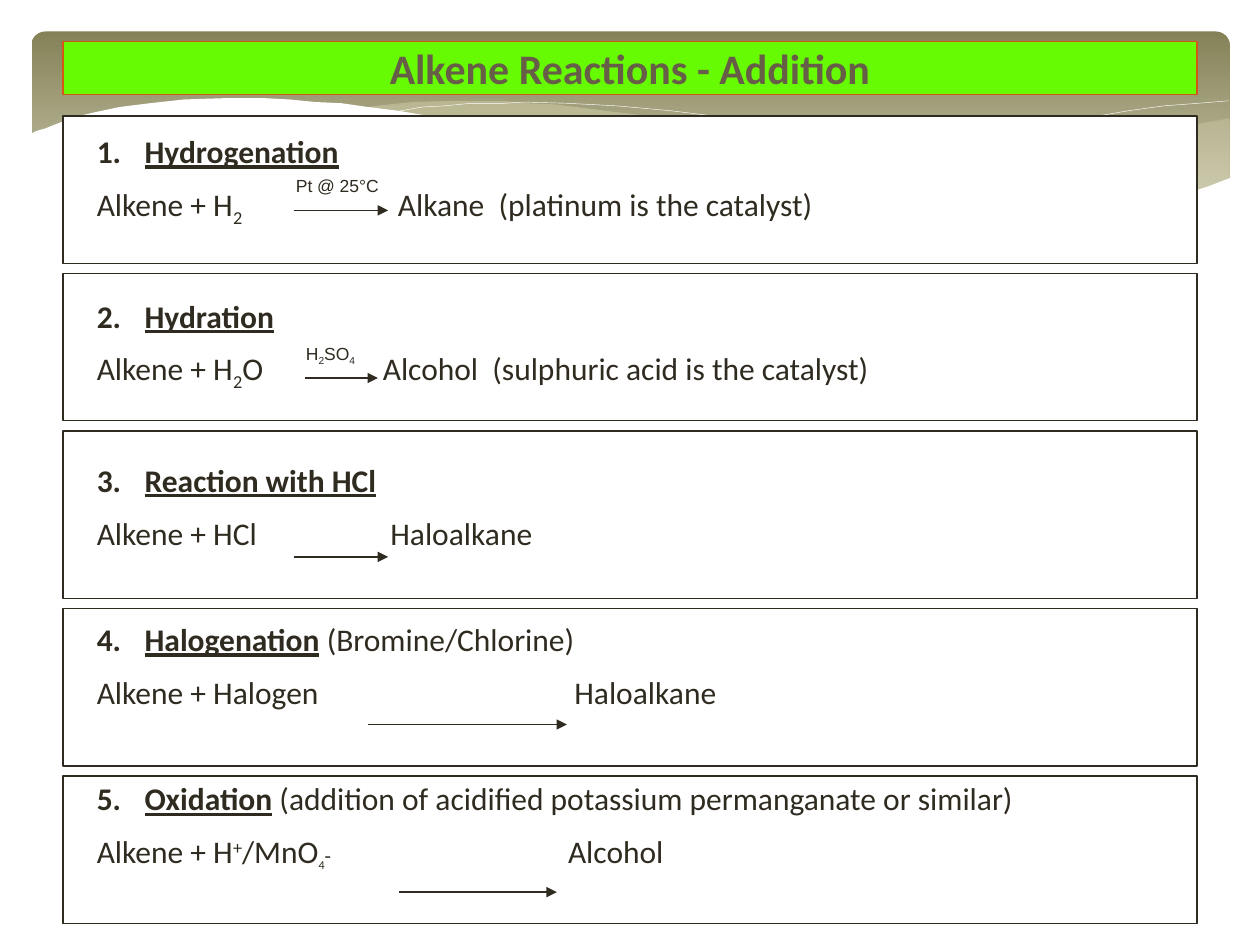
from itertools import accumulate
from lxml import etree
from pptx import Presentation
from pptx import util as u
from pptx.dml.color import RGBColor
from pptx.enum import shapes, text
from pptx.oxml import ns

THEME = {
    "ink": "2F2B20", "paper": "FFFFFF", "title": "675E47", "banner": "67FB03",
    "banner_line": "D25814", "wave": "DFDCB7", "band": ((0, "858157"), (0.9, "CBC9B0")),
    "body_font": "Calibri", "label_font": "Arial",
    "title_size": 24, "body_size": 18, "small_size": 12, "label_size": 10,
    "line": 0.75, "hairline": 0.25, "equation_gap": 8.6, "reaction_gap": 39.2,
}

TITLE = "Alkene Reactions - Addition"
SUB, SUPER = {"base": -25}, {"base": 30}
SMALL_SUB = {"base": -25, "size": THEME["small_size"]}
REACTIONS = [
    {"name": "Hydrogenation", "note": "", "height": 1.17,
     "reagent": [("Alkene + H", {}), ("2", SUB)],
     "product": "Alkane  (platinum is the catalyst)", "tab": 2.39,
     "arrow": (2.33, 3.08, 1.67),
     "label": (2.25, 0.92, [("Pt @ 25°C", {})])},
    {"name": "Hydration", "note": "", "height": 1.17,
     "reagent": [("Alkene + H", {}), ("2", SUB), ("O", {})],
     "product": "Alcohol  (sulphuric acid is the catalyst)", "tab": 2.27,
     "arrow": (2.42, 3, 3),
     "label": (2.33, 0.75, [("H", {}), ("2", SUB), ("SO", {}), ("4", SUB)])},
    {"name": "Reaction with HCl", "note": "", "height": 1.33,
     "reagent": [("Alkene + HCl", {})],
     "product": "Haloalkane", "tab": 2.33, "arrow": (2.33, 3.08, 4.42)},
    {"name": "Halogenation", "note": "(Bromine/Chlorine)", "height": 1.25,
     "reagent": [("Alkene + Halogen", {})],
     "product": "Haloalkane", "tab": 3.79, "arrow": (2.92, 4.5, 5.75)},
    {"name": "Oxidation", "height": 1.17,
     "note": "(addition of acidified potassium permanganate or similar)",
     "reagent": [("Alkene + H", {}), ("+", SUPER), ("/MnO", {}), ("4", SMALL_SUB),
                 ("-", {"size": THEME["small_size"]})],
     "product": "Alcohol", "tab": 3.74, "arrow": (3.17, 4.42, 7.08)},
]
PANEL_LEFT, PANEL_WIDTH, PANEL_TOP, PANEL_GAP = 0.5, 9, 0.92, 0.08

RIGHT_WAVE = [
    (975, 94), (948, 99), (921, 104), (891, 110), (861, 118), (805, 131), (753, 143),
    (706, 152), (661, 160), (691, 164), (719, 167), (745, 169), (769, 171), (792, 172),
    (824, 172), (854, 170), (881, 167), (905, 163), (928, 158), (949, 152), (963, 147),
    (976, 141), (976, 94)]
MIDDLE_WAVE = [
    (893, 167), (866, 164), (837, 159), (775, 149), (706, 134), (629, 116), (598, 109),
    (569, 102), (541, 97), (514, 92), (489, 89), (465, 86), (442, 83), (420, 82),
    (399, 80), (361, 80), (328, 81), (299, 84), (286, 86), (323, 90), (362, 97),
    (404, 106), (449, 116), (491, 126), (530, 135), (566, 143), (601, 150), (634, 156),
    (665, 161), (695, 165), (722, 168), (748, 170), (773, 172), (807, 173), (838, 172),
    (867, 170), (893, 167)]
LEFT_CREST = [
    (309, 90), (318, 88), (335, 85), (353, 84), (374, 82), (401, 82), (416, 81),
    (450, 82), (489, 84), (533, 88), (582, 94), (636, 103), (695, 114), (760, 128),
    (831, 145), (907, 166)]
RIGHT_CREST = [
    (613, 151), (653, 141), (695, 130), (748, 117), (806, 104), (866, 93), (895, 88),
    (924, 84), (951, 82), (975, 80)]
WHITE_WAVE = [
    (977, 141), (959, 148), (940, 154), (920, 159), (899, 164), (875, 167), (850, 170),
    (823, 171), (793, 171), (761, 170), (726, 167), (688, 162), (648, 156), (603, 149),
    (555, 139), (503, 128), (447, 114), (418, 107), (391, 102), (365, 96), (340, 92),
    (316, 88), (292, 85), (271, 82), (250, 81), (230, 79), (211, 78), (177, 78),
    (146, 79), (119, 82), (95, 85), (76, 89), (59, 93), (46, 98), (36, 102),
    (29, 104), (23, 107), (23, 224), (977, 224)]
WAVES = [
    (RIGHT_WAVE, THEME["wave"], 29, None), (MIDDLE_WAVE, THEME["wave"], 40, None),
    (LEFT_CREST, None, None, THEME["paper"]), (RIGHT_CREST, None, None, THEME["paper"]),
    (WHITE_WAVE, THEME["paper"], None, None)]


def style(shape, fill=None, line=None, weight=THEME["line"], alpha=None):
    shape.shadow.inherit = False
    for part, color in ((shape.fill, fill), (shape.line.fill, line)):
        if color is None:
            part.background()
        else:
            part.solid()
            part.fore_color.rgb = RGBColor.from_string(color)
    if line:
        shape.line.width = u.Pt(weight)
    if alpha:
        color = shape._element.spPr.find(ns.qn("a:solidFill"))[0]
        etree.SubElement(color, ns.qn("a:alpha"), val=str(alpha * 1000))


def add_span(para, words, size=THEME["body_size"], font=THEME["body_font"],
             color=THEME["ink"], base=0, **formats):
    span = para.add_run()
    span.text = words
    values = {"size": u.Pt(size), "name": font, **formats}
    for name, value in values.items():
        setattr(span.font, name, value)
    span.font.color.rgb = RGBColor.from_string(color)
    if base:
        span.font._element.set("baseline", str(base * 1000))


def add_rect(page, left, top, width, height, **look):
    box = page.shapes.add_shape(shapes.MSO_SHAPE.RECTANGLE,
                                *map(u.Inches, (left, top, width, height)))
    style(box, **look)
    return box


def add_text(page, left, top, width, height):
    box = page.shapes.add_textbox(*map(u.Inches, (left, top, width, height)))
    box.text_frame.word_wrap = True
    return box.text_frame


def add_background(page):
    band = page.shapes.add_shape(shapes.MSO_SHAPE.ROUNDED_RECTANGLE,
                                 *map(u.Inches, (0.25, 0.25, 9.51, 1.56)))
    band.adjustments[0] = 0.07
    style(band)
    band.fill.gradient()
    band.fill.gradient_angle = 270
    for stop, (position, color) in zip(band.fill.gradient_stops, THEME["band"]):
        stop.position = position
        stop.color.rgb = RGBColor.from_string(color)
    for points, fill, alpha, line in WAVES:
        builder = page.shapes.build_freeform(*points[0], scale=u.Inches(0.01))
        builder.add_line_segments(points[1:], close=fill is not None)
        style(builder.convert_to_shape(), fill, line, THEME["hairline"], alpha)


def add_reaction(frame, number, reaction):
    heading = frame.paragraphs[0] if number == 1 else frame.add_paragraph()
    heading.space_before = u.Pt(0 if number == 1 else THEME["reaction_gap"])
    props = heading._p.get_or_add_pPr()
    props.set("marL", str(u.Inches(0.38)))
    props.set("indent", str(-u.Inches(0.38)))
    etree.SubElement(props, ns.qn("a:buFont"), typeface=THEME["body_font"])
    etree.SubElement(props, ns.qn("a:buAutoNum"), type="arabicPeriod", startAt=str(number))
    add_span(heading, reaction["name"], bold=True, underline=True)
    if reaction["note"]:
        add_span(heading, " " + reaction["note"])

    equation = frame.add_paragraph()
    equation.space_before = u.Pt(THEME["equation_gap"])
    tabs = etree.SubElement(equation._p.get_or_add_pPr(), ns.qn("a:tabLst"))
    etree.SubElement(tabs, ns.qn("a:tab"), pos=str(u.Inches(reaction["tab"])), algn="l")
    for words, formats in reaction["reagent"]:
        add_span(equation, words, **formats)
    add_span(equation, "\t" + reaction["product"])


def add_arrow(page, start, end, height):
    arrow = page.shapes.add_connector(shapes.MSO_CONNECTOR.STRAIGHT,
                                      *map(u.Inches, (start, height, end, height)))
    arrow.line.color.rgb = RGBColor.from_string(THEME["ink"])
    arrow.line.width = u.Pt(THEME["line"])
    etree.SubElement(arrow.line._get_or_add_ln(), ns.qn("a:tailEnd"), type="triangle")
    etree.SubElement(arrow._element.spPr, ns.qn("a:effectLst"))


def main():
    deck = Presentation()
    deck.slide_width, deck.slide_height = u.Inches(10), u.Inches(7.5)
    page = deck.slides.add_slide(deck.slide_layouts[6])
    add_background(page)

    steps = [reaction["height"] + PANEL_GAP for reaction in REACTIONS[:-1]]
    for top, reaction in zip(accumulate(steps, initial=PANEL_TOP), REACTIONS):
        add_rect(page, PANEL_LEFT, top, PANEL_WIDTH, reaction["height"],
                 fill=THEME["paper"], line=THEME["ink"])

    frame = add_text(page, 0.67, 1, 9, 6.31)
    for number, reaction in enumerate(REACTIONS, 1):
        add_reaction(frame, number, reaction)
        add_arrow(page, *reaction["arrow"])
        if "label" in reaction:
            left, width, spans = reaction["label"]
            label = add_text(page, left, reaction["arrow"][2] - 0.33, width, 0.27)
            for words, formats in spans:
                add_span(label.paragraphs[0], words, size=THEME["label_size"],
                         font=THEME["label_font"], **formats)

    banner = add_rect(page, PANEL_LEFT, 0.33, PANEL_WIDTH, 0.42,
                      fill=THEME["banner"], line=THEME["banner_line"], weight=1)
    banner.text_frame.vertical_anchor = text.MSO_ANCHOR.MIDDLE
    para = banner.text_frame.paragraphs[0]
    para.alignment = text.PP_ALIGN.CENTER
    add_span(para, TITLE, size=THEME["title_size"], color=THEME["title"], bold=True)
    deck.save("out.pptx")


if __name__ == "__main__":
    main()
